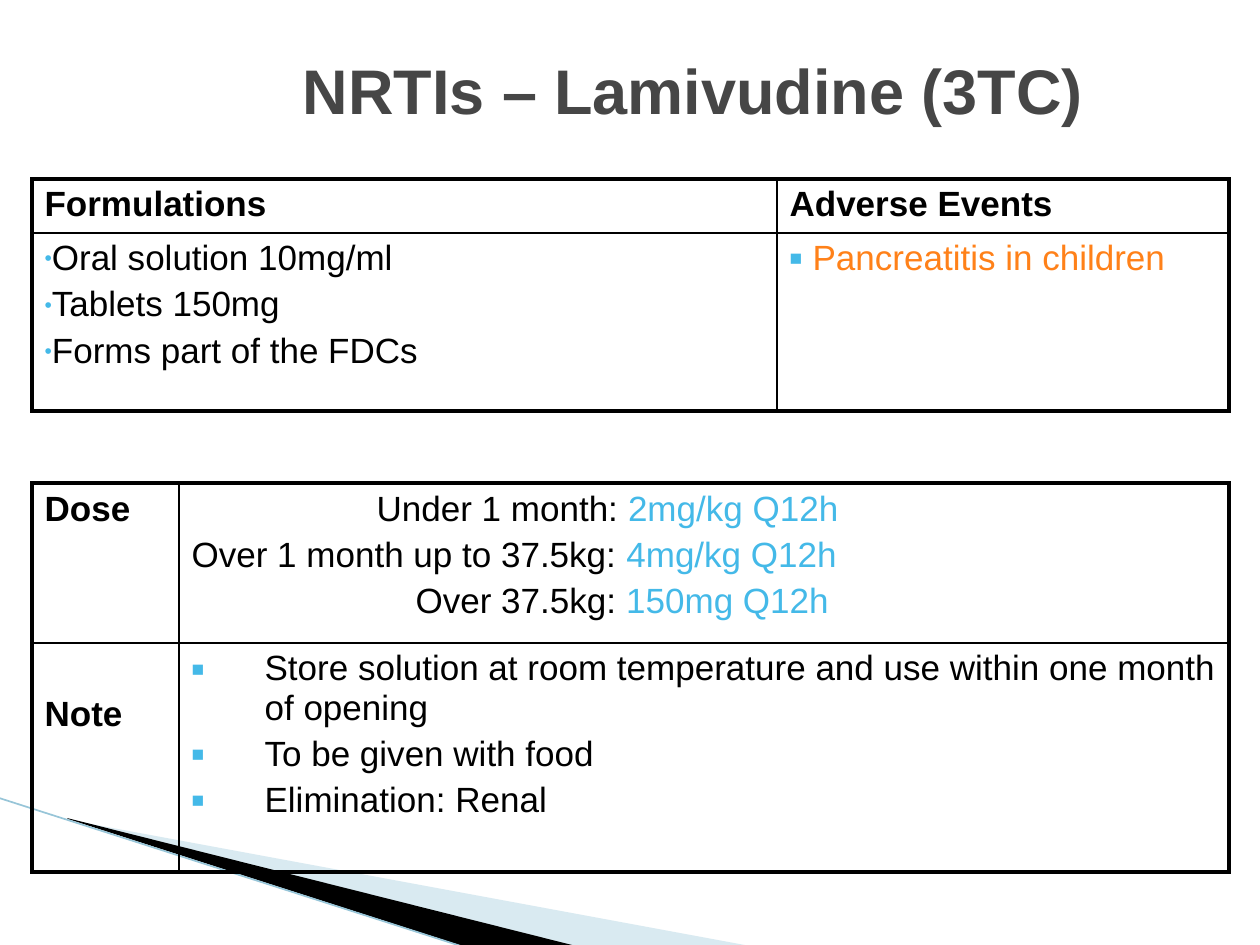
"""Builds the lamivudine slide: title, swoosh, and two bordered tables."""
import pptx
import pptx.util
import pptx.dml.color
import pptx.enum.shapes
import pptx.enum.text
import pptx.oxml
import pptx.oxml.ns

COLORS = {"ink": "000000", "title": "464646", "blue": "44B9E8", "orange": "FF8119",
          "pale": "A0CBDC", "edge": "97C5D8"}
FONT = "Arial"
NAMESPACE = pptx.oxml.ns.nsdecls("a")
TITLE = "NRTIs – Lamivudine (3TC)"
TITLE_AREA = (126, 42, 1134, 94)


def line(*spans, bold=False, bullet=None, indent=0, hang=0):
    return {"spans": spans, "bold": bold, "bullet": bullet, "indent": indent, "hang": hang}


def heading(text):
    return line((text, "ink"), bold=True)


def dot(text):
    return line((text, "ink"), bullet="•")


def square(text, color="ink", hang=73):
    return line((text, color), bullet="■", indent=hang, hang=hang)


def dose(group, amount, indent=0):
    return line((group + ": ", "ink"), (amount, "blue"), indent=indent)


TABLES = [
    {"left": 32, "top": 179, "columns": [745, 452], "rows": [54, 178], "drops": {},
     "cells": [
         [[heading("Formulations")], [heading("Adverse Events")]],
         [[dot("Oral solution 10mg/ml"), dot("Tablets 150mg"), dot("Forms part of the FDCs")],
          [square("Pancreatitis in children", "orange", 23)]],
     ]},
    {"left": 32, "top": 483, "columns": [147, 1050], "rows": [160, 229], "drops": {(1, 0): 46},
     "cells": [
         [[heading("Dose")],
          [dose("Under 1 month", "2mg/kg Q12h", 185),
           dose("Over 1 month up to 37.5kg", "4mg/kg Q12h"),
           dose("Over 37.5kg", "150mg Q12h", 224)]],
         [[heading("Note")],
          [square("Store solution at room temperature and use within one month of opening"),
           square("To be given with food"), square("Elimination: Renal")]],
     ]},
]
SWOOSHES = [
    ([(69, 820), (750, 946), (575, 946), (69, 819)], "pale", 40),
    ([(67, 818), (576, 946), (469, 948), (68, 819)], "ink", 100),
]
SWOOSH_EDGE = (-1, 798, 467, 948)


def px(value):
    return pptx.util.Emu(round(value * 914400 / 126))


def rgb(name):
    return pptx.dml.color.RGBColor.from_string(COLORS[name])


def style(span, size, color, bold):
    span.font.name, span.font.size, span.font.bold = FONT, pptx.util.Pt(size), bold
    span.font.color.rgb = rgb(color)


def add_swoosh(page, points, color, opacity):
    builder = page.shapes.build_freeform(*points[0], scale=px(1))
    builder.add_line_segments(points[1:], close=True)
    shape = builder.convert_to_shape()
    shape.shadow.inherit = False
    shape.fill.solid()
    shape.fill.fore_color.rgb = rgb(color)
    shape.line.fill.background()
    if opacity < 100:
        fill = shape.fill._xPr.find(".//" + pptx.oxml.ns.qn("a:srgbClr"))
        fill.append(pptx.oxml.parse_xml(f'<a:alpha {NAMESPACE} val="{opacity * 1000}"/>'))


def add_edge(page):
    edge = page.shapes.add_connector(pptx.enum.shapes.MSO_CONNECTOR.STRAIGHT,
                                     *map(px, SWOOSH_EDGE))
    edge.line.color.rgb = rgb("edge")
    edge.line.width = pptx.util.Pt(0.95)
    edge._element.spPr.append(pptx.oxml.parse_xml(f"<a:effectLst {NAMESPACE}/>"))


def set_borders(cell, outer):
    properties = cell._tc.get_or_add_tcPr()
    for place, (side, is_outer) in enumerate(outer.items()):
        width = pptx.util.Pt(2.25 if is_outer else 1)
        properties.insert(place, pptx.oxml.parse_xml(
            f'<a:ln{side} {NAMESPACE} w="{width}"><a:solidFill>'
            f'<a:srgbClr val="{COLORS["ink"]}"/></a:solidFill></a:ln{side}>'))


def write_lines(frame, lines):
    for number, item in enumerate(lines):
        para = frame.add_paragraph() if number else frame.paragraphs[0]
        if number:
            para.space_before = pptx.util.Pt(4)
        properties = para._p.get_or_add_pPr()
        properties.set("marL", str(px(item["indent"])))
        properties.set("indent", str(px(-item["hang"])))
        if item["bullet"]:
            for xml in (f'<a:buClr {NAMESPACE}><a:srgbClr val="{COLORS["blue"]}"/></a:buClr>',
                        f'<a:buSzPct {NAMESPACE} val="60000"/>',
                        f'<a:buFont {NAMESPACE} typeface="{FONT}"/>',
                        f'<a:buChar {NAMESPACE} char="{item["bullet"]}"/>'):
                properties.append(pptx.oxml.parse_xml(xml))
        for text, color in item["spans"]:
            span = para.add_run()
            span.text = text
            style(span, 20, color, item["bold"])


def add_table(page, data):
    columns, rows = data["columns"], data["rows"]
    area = (data["left"], data["top"], sum(columns), sum(rows))
    table = page.shapes.add_table(len(rows), len(columns), *map(px, area)).table
    table.first_row = table.horz_banding = False
    for column, width in zip(table.columns, columns):
        column.width = px(width)
    for r, height in enumerate(rows):
        table.rows[r].height = px(height)
        for c, lines in enumerate(data["cells"][r]):
            cell = table.cell(r, c)
            cell.fill.background()
            cell.margin_top = pptx.util.Inches(0.05) + px(data["drops"].get((r, c), 0))
            set_borders(cell, {"L": c == 0, "R": c == len(columns) - 1,
                               "T": r == 0, "B": r == len(rows) - 1})
            write_lines(cell.text_frame, lines)


def main():
    deck = pptx.Presentation()
    deck.slide_width, deck.slide_height = px(1260), px(945)
    page = deck.slides.add_slide(deck.slide_layouts[5])
    title = page.shapes.title
    title.left, title.top, title.width, title.height = map(px, TITLE_AREA)
    title.text_frame.text = TITLE
    title.text_frame.vertical_anchor = pptx.enum.text.MSO_ANCHOR.MIDDLE
    para = title.text_frame.paragraphs[0]
    para.alignment = pptx.enum.text.PP_ALIGN.CENTER
    style(para.runs[0], 36, "title", True)
    for swoosh in SWOOSHES:
        add_swoosh(page, *swoosh)
    add_edge(page)
    for data in TABLES:
        add_table(page, data)
    deck.save("out.pptx")


if __name__ == "__main__":
    main()
